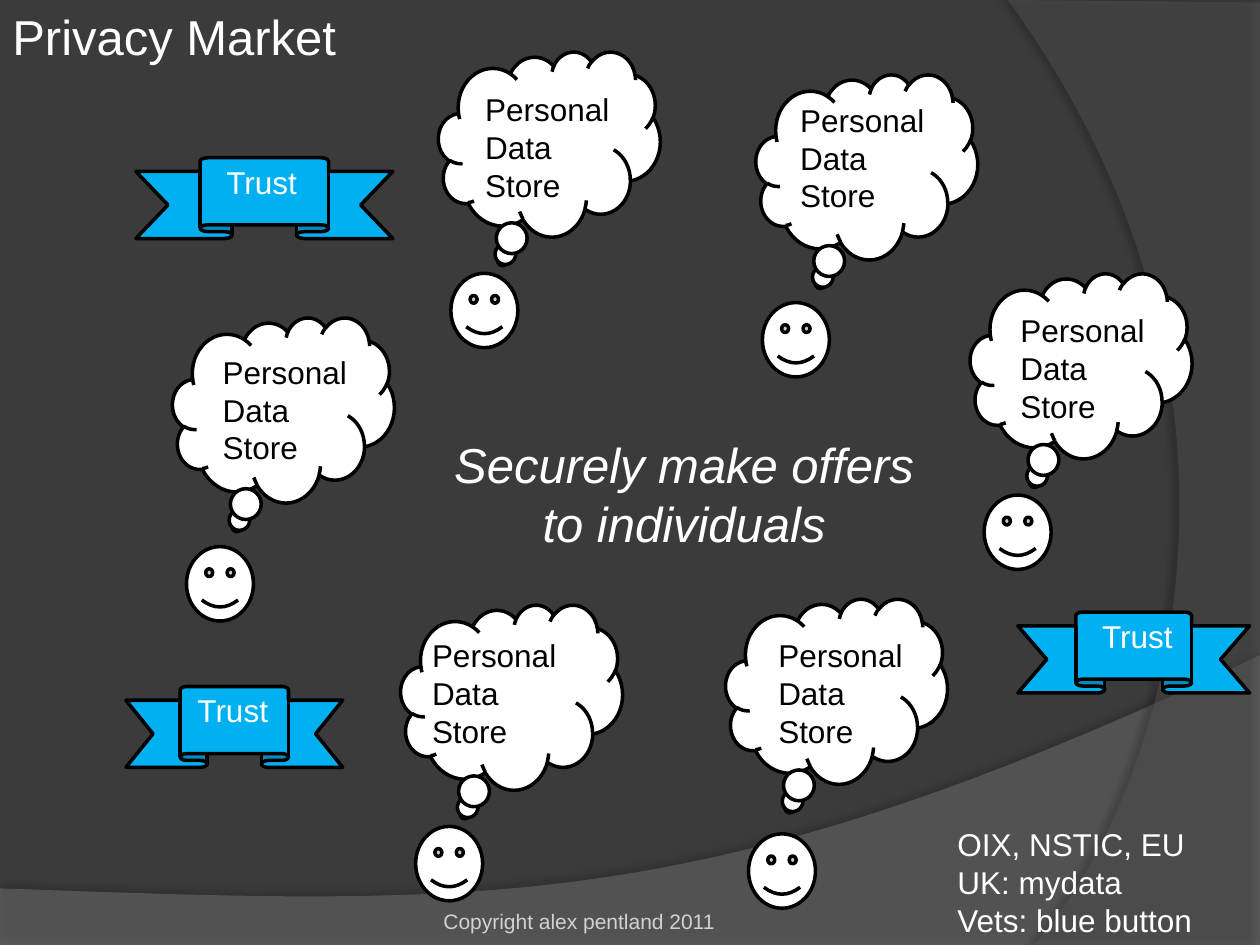
"""Build the privacy market slide: personal data stores linked by trust."""
from lxml import etree
from pptx import Presentation, util as u
from pptx.dml import color
from pptx.enum import shapes, text
from pptx.oxml import ns

KIND = shapes.MSO_SHAPE
WIDE, HIGH = 25.4, 19.05
CLOUD, FACE, LABEL = (4.47, 3.73), (1.35, 1.5), (3.05, 2.57)
STORE = ["Personal", "Data", "Store"]

PEOPLE = [
    {"cloud": (3.48, 6.4), "face": (3.76, 11.02), "label": (4.24, 6.99)},
    {"cloud": (8.84, 1.04), "face": (9.09, 5.51), "label": (9.53, 1.7)},
    {"cloud": (15.24, 1.5), "face": (15.37, 6.1), "label": (15.88, 1.91)},
    {"cloud": (19.56, 5.51), "face": (19.84, 9.98), "label": (20.32, 6.15)},
    {"cloud": (14.63, 12.07), "face": (15.09, 16.81), "label": (15.44, 12.7)},
    {"cloud": (8.08, 12.19), "face": (8.38, 16.66), "label": (8.46, 12.7)},
]
RIBBONS = [
    ((2.74, 3.18), (5.18, 1.63), 0.53),
    ((2.54, 13.84), (4.37, 1.63), 0.35),
    ((20.52, 12.34), (4.67, 1.63), 0.53),
]
NOTES = [
    (["OIX, NSTIC, EU", "UK: mydata", "Vets: blue button"],
     (19.05, 16.51), (5.28, 2.57), 18, "FFFFFF"),
    (["Copyright alex pentland 2011"], (8.69, 18.19), (6.02, 0.76), 12, "D4D2D0"),
    (["Privacy Market"], (0, 0), (7.11, 1.45), 28, "FFFFFF"),
]
OFFER = ["Securely make offers", "to individuals"]
WAVES = [
    {"edge": [(0, HIGH), (WIDE, HIGH)],
     "curve": [(WIDE, 13.21), (14.2, 18.52), (9.93, 18.26), (0, 17.91)],
     "fill": "7C7C7C", "alpha": 45, "shade": (35, 4, 3.5, 270)},
    {"edge": [(WIDE, 0.05), (WIDE, HIGH)],
     "curve": [(20.85, HIGH), (23.75, 15.72), (25.86, 7.62), (20.32, 0)],
     "fill": "595959", "alpha": 40, "shade": (45, 4, 4, 180)},
]


def tint(code):
    return color.RGBColor.from_string(code)


def paint(fill, code):
    fill.solid()
    fill.fore_color.rgb = tint(code)


def place(spot, size):
    return [u.Cm(n) for n in (*spot, *size)]


def bend(curve, steps=60):
    for i in range(steps + 1):
        t = i / steps
        parts = ((1 - t) ** 3, 3 * t * (1 - t) ** 2, 3 * t * t * (1 - t), t ** 3)
        yield tuple(sum(k * p[n] for k, p in zip(parts, curve)) for n in (0, 1))


def child(node, tag, **attrs):
    item = etree.SubElement(node, ns.qn("a:" + tag))
    for key, val in attrs.items():
        item.set(key, str(val))
    return item


def wave(slide, edge, curve, fill, alpha, shade):
    dots = [(u.Cm(x), u.Cm(y)) for x, y in edge + list(bend(curve))]
    pen = slide.shapes.build_freeform(*dots[0], scale=1.0)
    pen.add_line_segments(dots[1:], close=True)
    form = pen.convert_to_shape()
    paint(form.fill, fill)
    form.line.fill.background()
    props = form.element.spPr
    hue = props.find(ns.qn("a:solidFill"))[0]
    child(hue, "alpha", val=alpha * 1000)
    dark, blur, dist, turn = shade
    glow = child(child(props, "effectLst"), "outerShdw", blurRad=u.Pt(blur),
                 dist=u.Pt(dist), dir=turn * 60000, algn="ctr", rotWithShape=0)
    child(child(glow, "srgbClr", val="000000"), "alpha", val=dark * 1000)


def draw(slide, kind, spot, size, fill, adj):
    form = slide.shapes.add_shape(kind, *place(spot, size))
    form.shadow.inherit = False
    for n, val in enumerate(adj):
        form.adjustments[n] = val
    paint(form.fill, fill)
    form.line.color.rgb = tint("000000")
    form.line.width = u.Pt(2)
    return form


def write(frame, lines, size, code, align=text.PP_ALIGN.LEFT, slant=False):
    frame.text = "\n".join(lines)
    for para in frame.paragraphs:
        para.alignment = align
        font = para.font
        font.name, font.size, font.italic = "Arial", u.Pt(size), slant
        font.color.rgb = tint(code)


def note(slide, lines, spot, size, points, code, wrap=False, **look):
    frame = slide.shapes.add_textbox(*place(spot, size)).text_frame
    frame.word_wrap = wrap
    frame.auto_size = text.MSO_AUTO_SIZE.SHAPE_TO_FIT_TEXT
    write(frame, lines, points, code, **look)


def main():
    deck = Presentation()
    deck.slide_width, deck.slide_height = u.Cm(WIDE), u.Cm(HIGH)
    slide = deck.slides.add_slide(deck.slide_layouts[6])
    paint(slide.background.fill, "3B3B3B")
    for item in WAVES:
        wave(slide, **item)
    for one in PEOPLE:
        draw(slide, KIND.CLOUD_CALLOUT, one["cloud"], CLOUD, "FFFFFF", (-0.21, 0.63))
        draw(slide, KIND.SMILEY_FACE, one["face"], FACE, "FFFFFF", (0.05,))
        note(slide, STORE, one["label"], LABEL, 18, "000000")
    for spot, size, inset in RIBBONS:
        frame = draw(slide, KIND.UP_RIBBON, spot, size, "00B0F0", (0.17, 0.5)).text_frame
        frame.vertical_anchor = text.MSO_ANCHOR.TOP
        frame.margin_left, frame.margin_right = u.Cm(inset), u.Cm(0)
        frame.margin_top = frame.margin_bottom = u.Cm(0.1)
        write(frame, ["Trust"], 18, "FFFFFF")
    note(slide, OFFER, (7.54, 8.64), (12.5, 2.57), 28, "FFFFFF", wrap=True,
         align=text.PP_ALIGN.CENTER, slant=True)
    for item in NOTES:
        note(slide, *item)
    deck.save("out.pptx")


if __name__ == "__main__":
    main()
